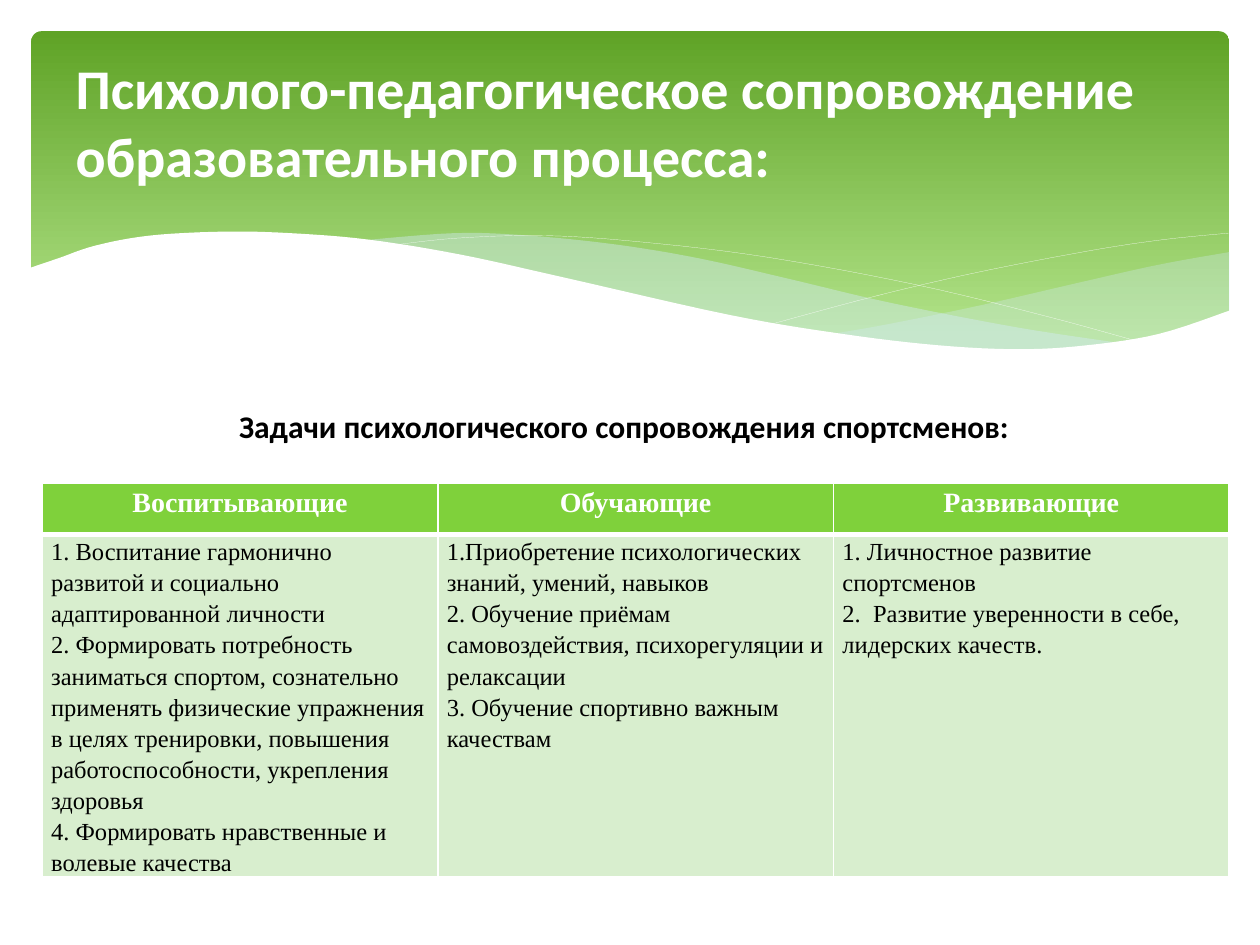
from dataclasses import dataclass
from typing import Optional

from lxml.etree import SubElement
from pptx import Presentation
from pptx.dml.color import RGBColor
from pptx.enum.shapes import MSO_SHAPE
from pptx.enum.text import MSO_ANCHOR, MSO_AUTO_SIZE, PP_ALIGN
from pptx.oxml.ns import qn
from pptx.util import Cm, Pt

WHITE, BLACK = "FFFFFF", "000000"
HEADER_GREEN, CELL_GREEN, WAVE_BLUE = "7FD13B", "D8EECE", "D6ECFF"
STEPS = 6


@dataclass
class Wave:
    curves: list  # each curve is a list of points in cm
    fill: Optional[str] = None
    alpha: int = 100
    line: Optional[str] = None


@dataclass
class Column:
    heading: str
    tasks: list


WAVES = [
    Wave([[(24.79, 5.08), (23.39, 5.33), (21.87, 5.67), (19.79, 6.15),
           (17.93, 6.53), (16.79, 6.73)],
          [(16.79, 6.73), (18.26, 6.91), (19.84, 7.04), (21.21, 7.04),
           (22.38, 6.93), (23.39, 6.73), (24.1, 6.53), (24.79, 6.27)]],
         WAVE_BLUE, 29),
    Wave([[(22.68, 6.93), (20.5, 6.6), (17.93, 6.1), (15.98, 5.64), (14.1, 5.21),
           (12.42, 4.93), (10.67, 4.75), (9.17, 4.7), (7.26, 4.85)],
          [(7.26, 4.85), (9.19, 5.16), (11.4, 5.64), (14.38, 6.3), (16.51, 6.71),
           (18.69, 7), (20.5, 7.06), (21.77, 7.04), (22.68, 6.93)]],
         WAVE_BLUE, 40),
    Wave([[(7.85, 4.95), (9.22, 4.8), (11, 4.75), (12.95, 4.88), (15.44, 5.18),
           (18.47, 5.74), (21.11, 6.38), (23.04, 6.91)]], line=WHITE),
    Wave([[(15.57, 6.53), (17.65, 5.97), (19.71, 5.49), (22, 5.05),
           (23.47, 4.83), (24.77, 4.7)]], line=WHITE),
    Wave([[(24.82, 6.25), (23.37, 6.73), (21.92, 6.96), (20.55, 7.04), (18.9, 6.96),
           (16.97, 6.73), (14.71, 6.35), (11.35, 5.59), (9.27, 5.13), (7.42, 4.83),
           (5.84, 4.7), (4.5, 4.67), (3.02, 4.75), (1.93, 4.95), (1.17, 5.21),
           (0.58, 5.41)],
          [(0.58, 8.36), (24.82, 8.36)]], WHITE),
]

COLUMNS = [
    Column("Воспитывающие", [
        "1. Воспитание гармонично развитой и социально адаптированной личности",
        "2. Формировать потребность заниматься спортом, сознательно применять "
        "физические упражнения в целях тренировки, повышения работоспособности, "
        "укрепления здоровья",
        "4. Формировать нравственные и волевые качества"]),
    Column("Обучающие", [
        "1.Приобретение психологических знаний, умений, навыков",
        "2. Обучение приёмам самовоздействия, психорегуляции и релаксации",
        "3. Обучение спортивно важным качествам"]),
    Column("Развивающие", [
        "1. Личностное развитие спортсменов",
        "2.  Развитие уверенности в себе, лидерских качеств."]),
]


def rgb(color: str) -> RGBColor:
    return RGBColor.from_string(color)


def write(tf, lines: list, align, color: str, spacing: float = 1.0, **font) -> None:
    """Fill a text frame with one paragraph per line."""
    for i, line in enumerate(lines):
        p = tf.paragraphs[0] if i == 0 else tf.add_paragraph()
        p.alignment, p.line_spacing = align, spacing
        r = p.add_run()
        r.text = line
        r.font.color.rgb = rgb(color)
        for name, value in font.items():
            setattr(r.font, name, value)


def smooth(points: list) -> list:
    """Sample a Catmull-Rom curve through the points."""
    padded = [points[0], *points, points[-1]]
    samples = [points[0]]
    for a, b, c, d in zip(padded, padded[1:], padded[2:], padded[3:]):
        for step in range(1, STEPS + 1):
            t = step / STEPS
            samples.append(tuple(
                (2 * q + (r - p) * t + (2 * p - 5 * q + 4 * r - u) * t ** 2
                 + (3 * q - p - 3 * r + u) * t ** 3) / 2
                for p, q, r, u in zip(a, b, c, d)))
    return samples


def draw_wave(s, wave: Wave) -> None:
    points = [(Cm(x), Cm(y)) for curve in wave.curves for x, y in smooth(curve)]
    builder = s.shapes.build_freeform(*points[0])
    builder.add_line_segments(points[1:], close=wave.fill is not None)
    sp = builder.convert_to_shape()
    sp.shadow.inherit = False
    if wave.fill:
        sp.fill.solid()
        sp.fill.fore_color.rgb = rgb(wave.fill)
        if wave.alpha < 100:
            clr = sp._element.spPr.find(qn("a:solidFill"))[0]
            SubElement(clr, qn("a:alpha"), val=str(wave.alpha * 1000))
    else:
        sp.fill.background()
    if wave.line:
        sp.line.color.rgb = rgb(wave.line)
        sp.line.width = Pt(0.1)
    else:
        sp.line.fill.background()


def style_cell(cell, fill: str, bottom: float) -> None:
    margins = dict(margin_left=Cm(0.18), margin_right=Cm(0.18),
                   margin_top=0, margin_bottom=0)
    for name, value in margins.items():
        setattr(cell, name, value)
    tcPr = cell._tc.get_or_add_tcPr()
    for side, width in dict(lnL=1, lnR=1, lnT=1, lnB=bottom).items():
        ln = SubElement(tcPr, qn(f"a:{side}"), w=str(Pt(width)))
        SubElement(SubElement(ln, qn("a:solidFill")), qn("a:srgbClr"), val=WHITE)
    cell.fill.solid()
    cell.fill.fore_color.rgb = rgb(fill)


def draw_banner(s) -> None:
    sp = s.shapes.add_shape(MSO_SHAPE.ROUNDED_RECTANGLE,
                            Cm(0.63), Cm(0.63), Cm(24.15), Cm(6.86))
    sp.adjustments[0] = 0.03
    sp.shadow.inherit = False
    sp.line.fill.background()
    sp.fill.gradient()
    sp.fill.gradient_angle = 270
    for stop, (pos, color) in zip(sp.fill.gradient_stops,
                                  [(0, "5FA326"), (0.9, "B2E389")]):
        stop.position, stop.color.rgb = pos, rgb(color)


def draw_table(s) -> None:
    table = s.shapes.add_table(2, len(COLUMNS), Cm(0.85), Cm(9.74),
                               Cm(23.93), Cm(7.94)).table
    table.horz_banding = False
    table.rows[0].height, table.rows[1].height = Cm(1.04), Cm(6.9)
    font = dict(name="Times New Roman")
    for i, column in enumerate(COLUMNS):
        head, body = table.cell(0, i), table.cell(1, i)
        style_cell(head, HEADER_GREEN, 3)
        write(head.text_frame, [column.heading], PP_ALIGN.CENTER, WHITE, 1.15,
              size=Pt(16), bold=True, **font)
        style_cell(body, CELL_GREEN, 1)
        write(body.text_frame, column.tasks, PP_ALIGN.LEFT, BLACK, 1.15,
              size=Pt(14), bold=False, **font)


def main() -> None:
    prs = Presentation()
    prs.slide_width, prs.slide_height = Cm(25.4), Cm(19.05)
    s = prs.slides.add_slide(prs.slide_layouts[5])

    # Banner with waves
    draw_banner(s)
    for wave in WAVES:
        draw_wave(s, wave)

    # Table of tasks
    draw_table(s)

    # Title, brought in front of the banner
    title = s.shapes.title
    s.shapes._spTree.append(title._element)
    title.left, title.top, title.width, title.height = (
        Cm(1.27), Cm(1.07), Cm(22.86), Cm(2.74))
    tf = title.text_frame
    tf.auto_size, tf.vertical_anchor = MSO_AUTO_SIZE.NONE, MSO_ANCHOR.MIDDLE
    write(tf, ["Психолого-педагогическое сопровождение образовательного процесса:"],
          PP_ALIGN.LEFT, WHITE, name="Calibri", size=Pt(32), bold=True)

    # Table heading
    tf = s.shapes.add_textbox(Cm(2.74), Cm(6.55), Cm(19.69), Cm(3.33)).text_frame
    tf.word_wrap, tf.margin_top = True, Cm(1.66)
    write(tf, ["Задачи психологического сопровождения спортсменов:"],
          PP_ALIGN.CENTER, BLACK, name="Calibri", size=Pt(18), bold=True)

    prs.save("out.pptx")


if __name__ == "__main__":
    main()
